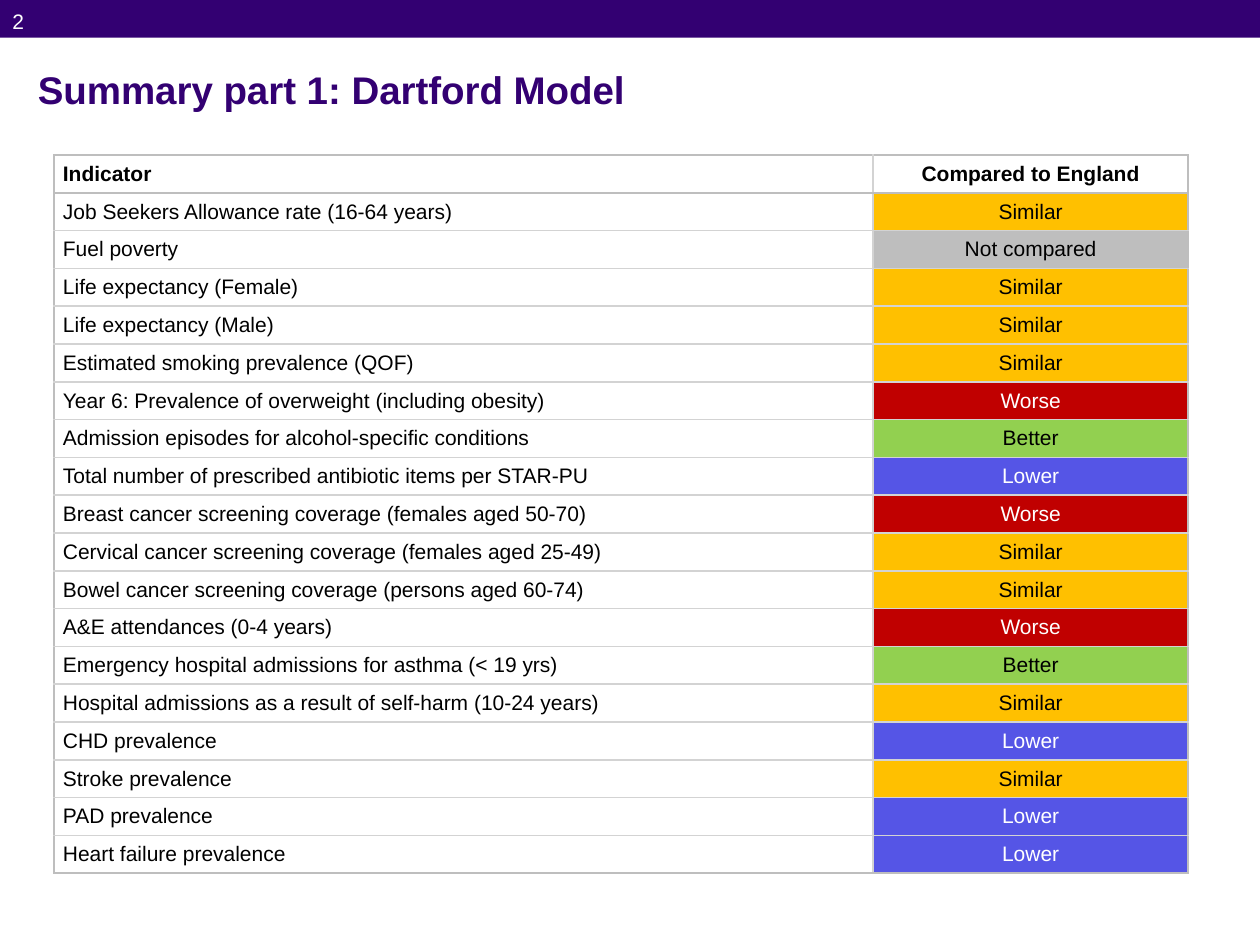
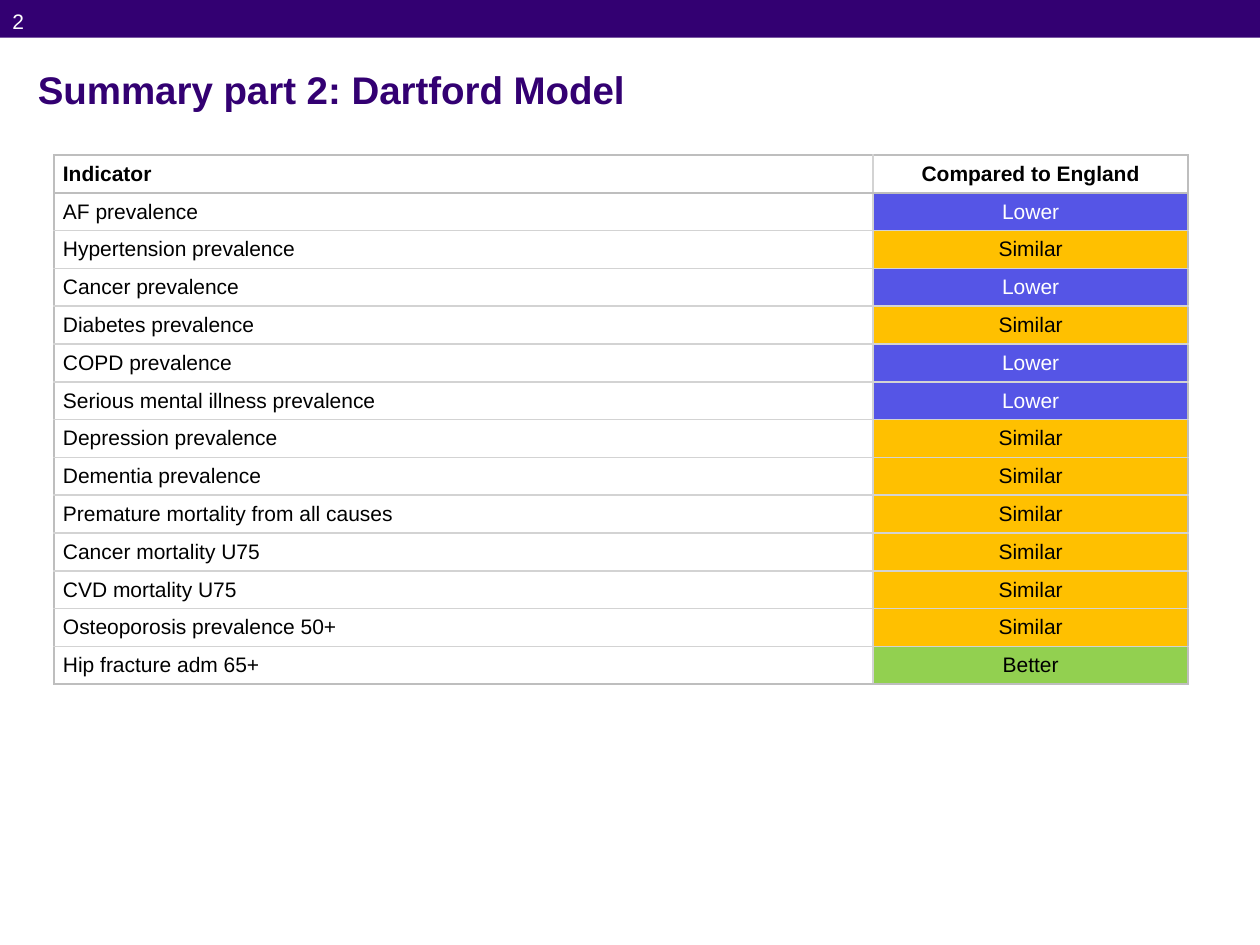
from dataclasses import dataclass

from lxml.etree import SubElement
from pptx import Presentation
from pptx.dml.color import RGBColor
from pptx.enum.shapes import MSO_SHAPE
from pptx.enum.text import MSO_ANCHOR, MSO_AUTO_SIZE, PP_ALIGN
from pptx.oxml.ns import qn
from pptx.util import Inches, Pt


@dataclass(frozen=True)
class Theme:
    font: str = "Arial"
    purple: str = "330072"
    white: str = "FFFFFF"
    black: str = "000000"
    outer_line: str = "BEBEBE"
    inner_line: str = "D3D3D3"
    title_size: int = 22
    text_size: int = 12
    line_width: int = 1


THEME = Theme()

RATING_COLOURS = {
    "Similar": ("FFC000", THEME.black),
    "Not compared": ("BEBEBE", THEME.black),
    "Worse": ("C00000", THEME.white),
    "Better": ("92D050", THEME.black),
    "Lower": ("5555E6", THEME.white),
}

HEADINGS = ("Indicator", "Compared to England")
COLUMN_WIDTHS = (6.5, 2.5)
ROW_HEIGHT = 0.3
PAGE_NUMBER = "2"

SUMMARIES = {
    "Summary part 1: Dartford Model": [
        ("Job Seekers Allowance rate (16-64 years)", "Similar"),
        ("Fuel poverty", "Not compared"),
        ("Life expectancy (Female)", "Similar"),
        ("Life expectancy (Male)", "Similar"),
        ("Estimated smoking prevalence (QOF)", "Similar"),
        ("Year 6: Prevalence of overweight (including obesity)", "Worse"),
        ("Admission episodes for alcohol-specific conditions", "Better"),
        ("Total number of prescribed antibiotic items per STAR-PU", "Lower"),
        ("Breast cancer screening coverage (females aged 50-70)", "Worse"),
        ("Cervical cancer screening coverage (females aged 25-49)", "Similar"),
        ("Bowel cancer screening coverage (persons aged 60-74)", "Similar"),
        ("A&E attendances (0-4 years)", "Worse"),
        ("Emergency hospital admissions for asthma (< 19 yrs)", "Better"),
        ("Hospital admissions as a result of self-harm (10-24 years)", "Similar"),
        ("CHD prevalence", "Lower"),
        ("Stroke prevalence", "Similar"),
        ("PAD prevalence", "Lower"),
        ("Heart failure prevalence", "Lower"),
    ],
    "Summary part 2: Dartford Model": [
        ("AF prevalence", "Lower"),
        ("Hypertension prevalence", "Similar"),
        ("Cancer prevalence", "Lower"),
        ("Diabetes prevalence", "Similar"),
        ("COPD prevalence", "Lower"),
        ("Serious mental illness prevalence", "Lower"),
        ("Depression prevalence", "Similar"),
        ("Dementia prevalence", "Similar"),
        ("Premature mortality from all causes", "Similar"),
        ("Cancer mortality U75", "Similar"),
        ("CVD mortality U75", "Similar"),
        ("Osteoporosis prevalence 50+", "Similar"),
        ("Hip fracture adm 65+", "Better"),
    ],
}


def write_text(frame, text, size, colour, bold=False, align=PP_ALIGN.LEFT):
    frame.text = text
    para = frame.paragraphs[0]
    para.alignment = align
    for span in para.runs:
        span.font.name = THEME.font
        span.font.size = Pt(size)
        span.font.bold = bold
        span.font.color.rgb = RGBColor.from_string(colour)
    return para


def add_band(page):
    band = page.shapes.add_shape(
        MSO_SHAPE.RECTANGLE, 0, 0, Inches(10), Inches(ROW_HEIGHT)
    )
    band.shadow.inherit = False
    band.fill.solid()
    band.fill.fore_color.rgb = RGBColor.from_string(THEME.purple)
    band.line.fill.background()


def add_page_number(page):
    box = page.shapes.add_textbox(0, 0, Inches(0.63), Inches(0.63))
    frame = box.text_frame
    frame.word_wrap = True
    frame.margin_top = Inches(0.07)
    write_text(frame, PAGE_NUMBER, THEME.text_size, THEME.white)


def format_title(page, text):
    title = page.shapes.title
    title.left, title.top = Inches(0.2), Inches(0.47)
    title.width, title.height = Inches(9.61), Inches(0.45)
    frame = title.text_frame
    frame.auto_size = MSO_AUTO_SIZE.NONE
    frame.vertical_anchor = MSO_ANCHOR.BOTTOM
    frame.margin_bottom = Inches(0.03)
    write_text(frame, text, THEME.title_size, THEME.purple, bold=True)


def set_borders(cell, colours):
    properties = cell._tc.get_or_add_tcPr()
    for side, colour in colours.items():
        line = SubElement(properties, qn(f"a:ln{side}"), w=str(Pt(THEME.line_width)))
        fill = SubElement(line, qn("a:solidFill"))
        SubElement(fill, qn("a:srgbClr"), val=colour)


def border_colours(row, column, last_row):
    outer, inner = THEME.outer_line, THEME.inner_line
    return {
        "L": outer if column == 0 else inner,
        "R": inner if column == 0 else outer,
        "T": outer if row <= 1 else inner,
        "B": outer if row in (0, last_row) else inner,
    }


def fill_cell(cell, text, column, bold):
    background, colour = RATING_COLOURS.get(text, (None, THEME.black))
    cell.vertical_anchor = MSO_ANCHOR.MIDDLE
    cell.margin_left = cell.margin_right = Inches(0.07)
    cell.margin_top = cell.margin_bottom = 0
    if background:
        cell.fill.solid()
        cell.fill.fore_color.rgb = RGBColor.from_string(background)
    else:
        cell.fill.background()
    align = PP_ALIGN.CENTER if column else PP_ALIGN.LEFT
    para = write_text(cell.text_frame, text, THEME.text_size, colour, bold, align)
    para.space_before = para.space_after = Pt(5)


def add_indicator_table(page, indicators):
    rows = [HEADINGS, *indicators]
    table = page.shapes.add_table(
        len(rows), len(HEADINGS), Inches(0.43), Inches(1.23),
        Inches(sum(COLUMN_WIDTHS)), Inches(ROW_HEIGHT * len(rows)),
    ).table
    table.first_row = table.horz_banding = False
    for column, width in zip(table.columns, COLUMN_WIDTHS):
        column.width = Inches(width)
    for row, texts in enumerate(rows):
        table.rows[row].height = Inches(ROW_HEIGHT)
        for column, text in enumerate(texts):
            cell = table.cell(row, column)
            set_borders(cell, border_colours(row, column, len(rows) - 1))
            fill_cell(cell, text, column, bold=row == 0)


def main():
    deck = Presentation()
    deck.slide_width, deck.slide_height = Inches(10), Inches(7.5)
    title_only = deck.slide_layouts.get_by_name("Title Only")
    for title, indicators in SUMMARIES.items():
        page = deck.slides.add_slide(title_only)
        add_band(page)
        format_title(page, title)
        add_page_number(page)
        add_indicator_table(page, indicators)
    deck.save("out.pptx")


if __name__ == "__main__":
    main()
